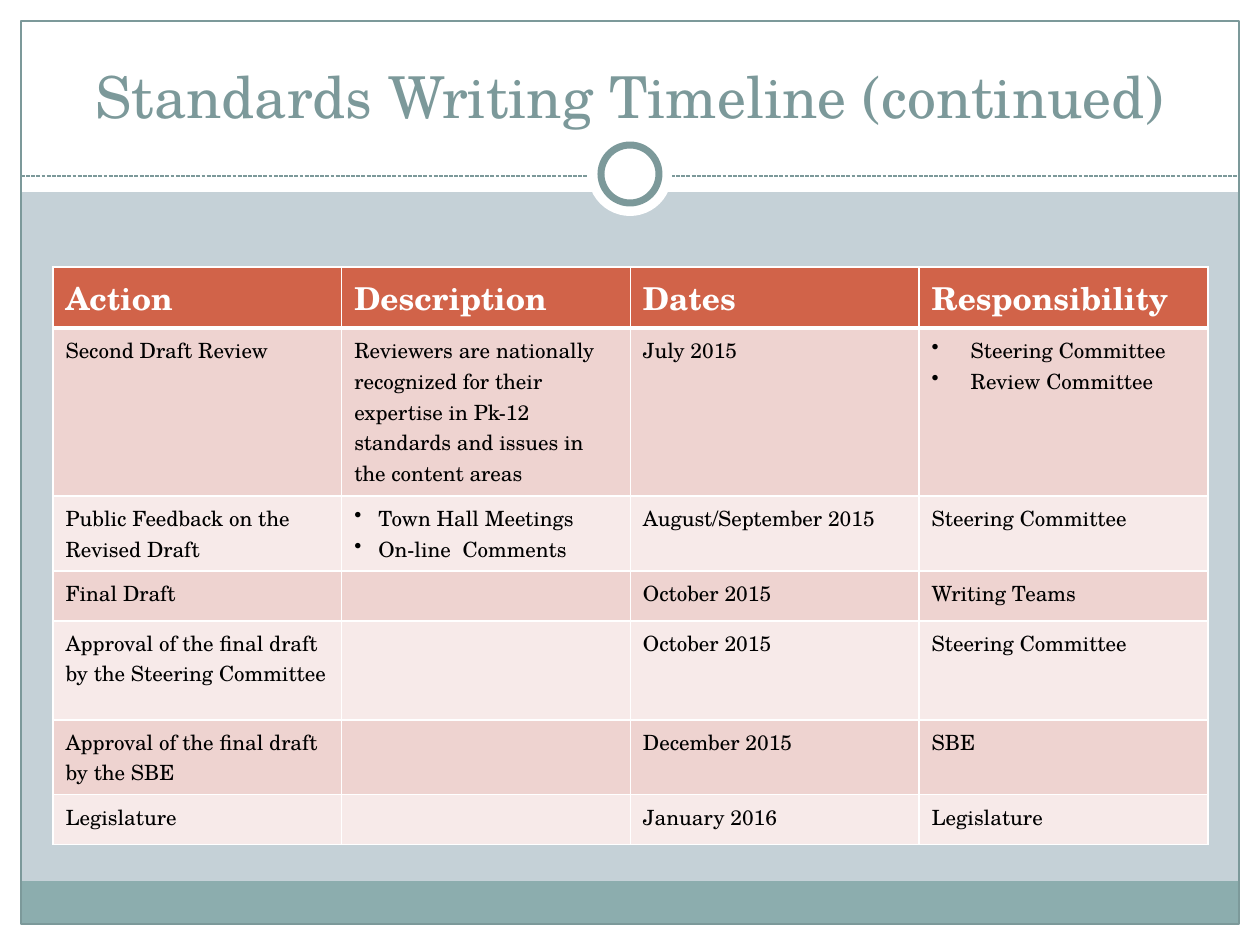
"""Build the standards writing timeline slide."""
from dataclasses import dataclass
from typing import Optional

from lxml import etree
from pptx import Presentation
from pptx import util as u
from pptx.dml.color import RGBColor
from pptx.enum import dml, shapes, text
from pptx.oxml import ns

PX_PER_INCH = 126


@dataclass(frozen=True)
class Theme:
    font: str = "TeX Gyre Schola"
    background: str = "C5D1D7"
    white: str = "FFFFFF"
    black: str = "000000"
    slate: str = "7C999A"
    footer: str = "8CADAE"
    header: str = "D16349"
    bands: tuple = ("EED3D0", "F7EAE9")
    title_size: int = 33
    header_size: int = 18
    body_size: int = 12
    thin: float = 0.75
    ring: int = 4
    border: int = 1
    header_border: int = 3


@dataclass(frozen=True)
class Block:
    left: int
    top: int
    width: int
    height: int
    fill: Optional[str] = None
    line: Optional[str] = None
    line_width: float = 0
    kind: shapes.MSO_SHAPE = shapes.MSO_SHAPE.RECTANGLE


@dataclass(frozen=True)
class Bullets:
    items: tuple
    indent: int


@dataclass(frozen=True)
class Row:
    height: int
    cells: tuple


THEME = Theme()
OVAL = shapes.MSO_SHAPE.OVAL

MARGINS = (
    Block(0, 924, 1260, 21, THEME.white),
    Block(0, 0, 1260, 192, THEME.white),
    Block(0, 0, 21, 945, THEME.white),
    Block(1239, 0, 21, 945, THEME.white),
    Block(21, 881, 1218, 43, THEME.footer),
    Block(21, 21, 1218, 903, None, THEME.slate, THEME.thin),
)
RING = (
    Block(588, 132, 84, 84, THEME.white, kind=OVAL),
    Block(601, 145, 58, 58, THEME.white, THEME.slate, THEME.ring, OVAL),
)
ROWS = (
    Row(61, ("Action", "Description", "Dates", "Responsibility")),
    Row(168, (
        "Second Draft Review",
        "Reviewers are nationally recognized for their expertise in Pk-12 "
        "standards and issues in the content areas",
        "July 2015",
        Bullets(("Steering Committee", "Review Committee"), 39),
    )),
    Row(75, (
        "Public Feedback on the Revised Draft",
        Bullets(("Town Hall Meetings", "On-line  Comments"), 24),
        "August/September 2015",
        "Steering Committee",
    )),
    Row(50, ("Final Draft", "", "October 2015", "Writing Teams")),
    Row(99, ("Approval of the final draft by the Steering Committee", "",
             "October 2015", "Steering Committee")),
    Row(75, ("Approval of the final draft by the SBE", "", "December 2015", "SBE")),
    Row(50, ("Legislature", "", "January 2016", "Legislature")),
)


def px(length: int) -> u.Emu:
    """Turn pixels into EMU."""
    return u.Emu(round(length * u.Inches(1) / PX_PER_INCH))


def color(value: str) -> RGBColor:
    """Read a hexadecimal colour."""
    return RGBColor.from_string(value)


def style(paragraph, size: int, value: str, bold: bool = False) -> None:
    """Set the font of a whole paragraph."""
    font = paragraph.font
    font.name, font.size, font.bold = THEME.font, u.Pt(size), bold
    font.color.rgb = color(value)


def draw_block(slide, block: Block) -> None:
    """Draw one filled or outlined shape."""
    shape = slide.shapes.add_shape(
        block.kind, px(block.left), px(block.top), px(block.width), px(block.height))
    shape.shadow.inherit = False
    if block.fill:
        shape.fill.solid()
        shape.fill.fore_color.rgb = color(block.fill)
    else:
        shape.fill.background()
    if block.line:
        shape.line.color.rgb = color(block.line)
        shape.line.width = u.Pt(block.line_width)
    else:
        shape.line.fill.background()


def draw_divider(slide) -> None:
    """Draw the dashed line under the title."""
    divider = slide.shapes.add_connector(
        shapes.MSO_CONNECTOR.STRAIGHT, px(21), px(176), px(1239), px(176))
    divider.line.color.rgb = color(THEME.slate)
    divider.line.width = u.Pt(THEME.thin)
    divider.line.dash_style = dml.MSO_LINE.SQUARE_DOT
    etree.SubElement(divider._element.spPr, ns.qn("a:effectLst"))


def draw_title(slide) -> None:
    """Write the slide title."""
    frame = slide.shapes.add_textbox(px(42), px(31), px(1176), px(105)).text_frame
    frame.word_wrap = True
    frame.vertical_anchor = text.MSO_ANCHOR.BOTTOM
    paragraph = frame.paragraphs[0]
    paragraph.text = "Standards Writing Timeline (continued)"
    paragraph.alignment = text.PP_ALIGN.CENTER
    style(paragraph, THEME.title_size, THEME.slate)


def add_bullet(paragraph, indent: int) -> None:
    """Give a paragraph a hanging bullet."""
    properties = paragraph._p.get_or_add_pPr()
    properties.set("marL", str(px(indent)))
    properties.set("indent", str(-px(indent)))
    bullet = etree.Element(ns.qn("a:buChar"), char="•")
    properties.insert(0, bullet)


def add_borders(cell, top: int, bottom: int) -> None:
    """Outline a table cell in white."""
    properties = cell._tc.get_or_add_tcPr()
    widths = {"L": THEME.border, "R": THEME.border, "T": top, "B": bottom}
    for side, width in widths.items():
        line = etree.SubElement(properties, ns.qn(f"a:ln{side}"), w=str(u.Pt(width)))
        fill = etree.SubElement(line, ns.qn("a:solidFill"))
        etree.SubElement(fill, ns.qn("a:srgbClr"), val=THEME.white)


def fill_cell(cell, content, row_index: int) -> None:
    """Write and style one table cell."""
    is_header = row_index == 0
    add_borders(cell,
                THEME.header_border if row_index == 1 else THEME.border,
                THEME.header_border if is_header else THEME.border)
    cell.fill.solid()
    cell.fill.fore_color.rgb = color(
        THEME.header if is_header else THEME.bands[(row_index - 1) % 2])
    bulleted = isinstance(content, Bullets)
    cell.text = "\n".join(content.items) if bulleted else content
    for paragraph in cell.text_frame.paragraphs:
        if is_header:
            style(paragraph, THEME.header_size, THEME.white, True)
        else:
            style(paragraph, THEME.body_size, THEME.black)
        if bulleted:
            add_bullet(paragraph, content.indent)


def draw_table(slide) -> None:
    """Draw the timeline table."""
    height = sum(row.height for row in ROWS)
    table = slide.shapes.add_table(
        len(ROWS), len(ROWS[0].cells), px(53), px(267), px(1155), px(height)).table
    for row_index, row in enumerate(ROWS):
        table.rows[row_index].height = px(row.height)
        for column_index, content in enumerate(row.cells):
            fill_cell(table.cell(row_index, column_index), content, row_index)


def main() -> None:
    """Assemble and save the presentation."""
    presentation = Presentation()
    presentation.slide_width, presentation.slide_height = px(1260), px(945)
    slide = presentation.slides.add_slide(presentation.slide_layouts[6])
    slide.background.fill.solid()
    slide.background.fill.fore_color.rgb = color(THEME.background)
    for block in MARGINS:
        draw_block(slide, block)
    draw_divider(slide)
    for block in RING:
        draw_block(slide, block)
    draw_title(slide)
    draw_table(slide)
    presentation.save("out.pptx")


if __name__ == "__main__":
    main()
